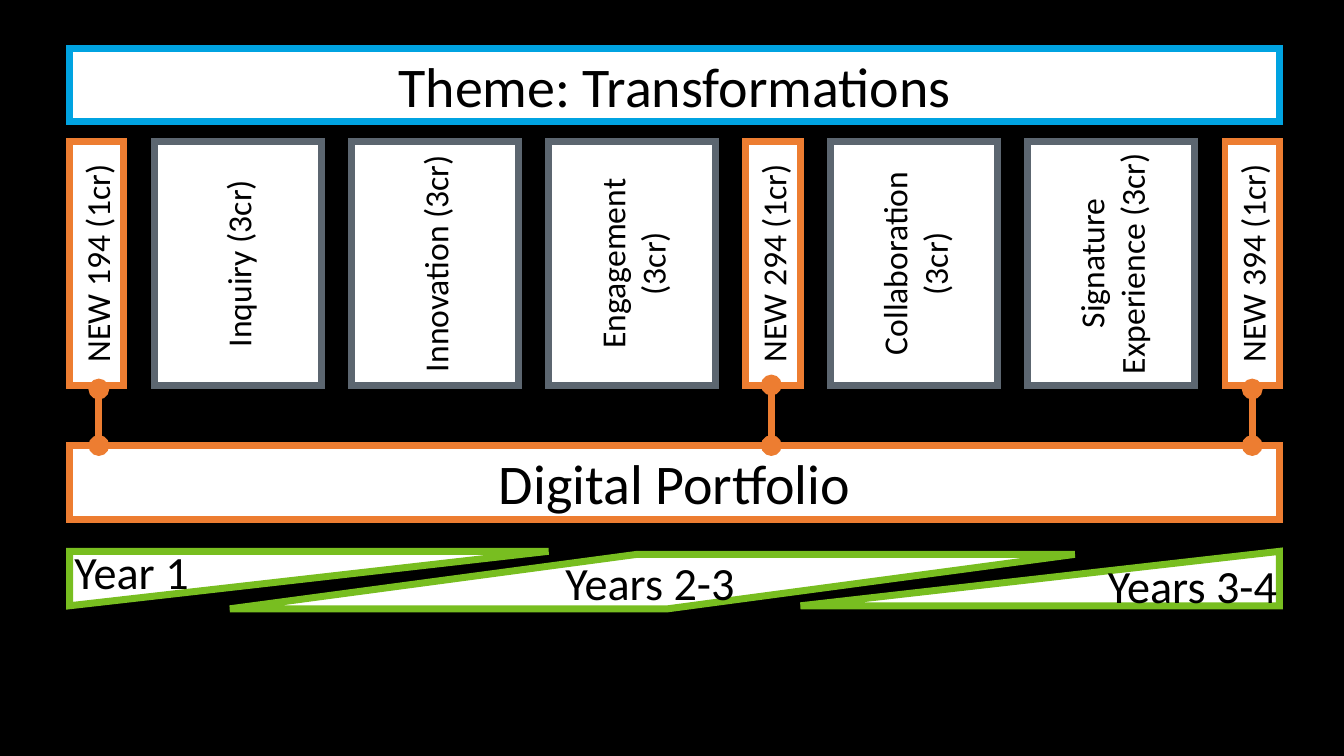
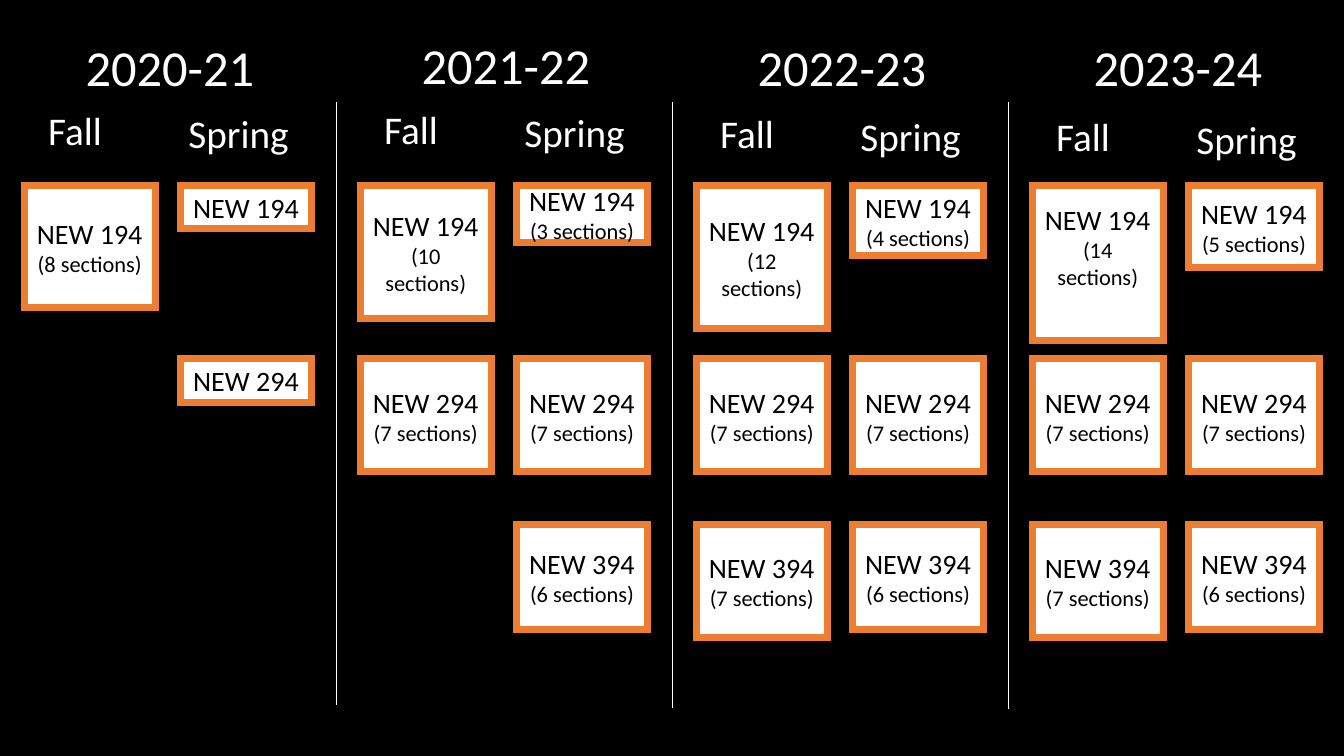
"""Builds two slides: a themed course pathway and its four-year schedule."""
from lxml import etree
from pptx import Presentation
from pptx.dml.color import RGBColor
from pptx.enum import shapes, text
from pptx.oxml.ns import qn
from pptx.util import Inches, Pt

BLACK, WHITE = "000000", "FFFFFF"
BLUE, ORANGE, GRAY, GREEN = "00A3E1", "ED7D31", "5C6670", "78BE20"
FONT = "Calibri"
WIDTH, HEIGHT = 13.33, 7.5
BORDER = 5

LEFT, SPAN = 0.69, 12
BANNERS = [("Theme: Transformations", 0.48, BLUE), ("Digital Portfolio", 4.42, ORANGE)]
COURSES = [
    ("NEW 194 (1cr)", 0.54, ORANGE),
    ("Inquiry (3cr)", 1.65, GRAY),
    ("Innovation (3cr)", 1.65, GRAY),
    ("Engagement (3cr)", 1.65, GRAY),
    ("NEW 294 (1cr)", 0.54, ORANGE),
    ("Collaboration (3cr)", 1.65, GRAY),
    ("Signature\vExperience (3cr)", 1.65, GRAY),
    ("NEW 394 (1cr)", 0.54, ORANGE),
]
PORTFOLIO_LINKS = [(0.98, 3.86), (7.65, 3.82), (12.42, 3.86)]
STAGES = [
    ("RIGHT_TRIANGLE", (LEFT, 5.47, 4.75, 0.54), "flipV", "Year 1", (0.64, 5.34, 1.35, 0.66)),
    ("RIGHT_TRIANGLE", (7.94, 5.47, 4.75, 0.54), "flipH", "Years 3-4", (10.89, 5.48, 1.9, 0.66)),
    ("PARALLELOGRAM", (2.28, 5.5, 8.38, 0.54), None, "Years 2-3", (5.51, 5.45, 1.9, 0.66)),
]
PARALLELOGRAM_SLANT = 7.474

YEARS = [
    {"name": "2020-21", "tops": (0.31, 1.01, 1.04), "divider_end": 6.99,
     "fall": [("194", 8, 1.21)],
     "spring": [("194", None, 0.43), ("294", None, 0.43)]},
    {"name": "2021-22", "tops": (0.29, 1, 1.03), "divider_end": 7.02,
     "fall": [("194", 10, 1.32), ("294", 7, 1.12)],
     "spring": [("194", 3, 0.57), ("294", 7, 1.12), ("394", 6, 1.05)]},
    {"name": "2022-23", "tops": (0.31, 1.04, 1.07), "divider_end": 7.03,
     "fall": [("194", 12, 1.42), ("294", 7, 1.12), ("394", 7, 1.12)],
     "spring": [("194", 4, 0.69), ("294", 7, 1.12), ("394", 6, 1.05)]},
    {"name": "2023-24", "tops": (0.31, 1.07, 1.09), "divider_end": None,
     "fall": [("194", 14, 1.54), ("294", 7, 1.12), ("394", 7, 1.12)],
     "spring": [("194", 5, 0.81), ("294", 7, 1.12), ("394", 6, 1.05)]},
]
COURSE_TOPS = {"194": 1.84, "294": 3.56, "394": 5.2}
TERM_LEFTS = {"fall": 0.24, "spring": 1.79}
SECTION_WIDTH = 1.3
RAISED_BOTTOM_INSET = 0.38


def color(value):
    return RGBColor.from_string(value)


def write(shape, lines, align="LEFT", anchor="TOP", ink=BLACK, vertical=None, wrap=True):
    frame = shape.text_frame
    frame.word_wrap = wrap
    frame.vertical_anchor = text.MSO_ANCHOR[anchor]
    if vertical:
        frame._txBody.bodyPr.set("vert", vertical)
    for index, (words, size) in enumerate(lines):
        paragraph = frame.add_paragraph() if index else frame.paragraphs[0]
        paragraph.text = words
        paragraph.alignment = text.PP_ALIGN[align]
        paragraph.font.name = FONT
        paragraph.font.size = Pt(size)
        paragraph.font.color.rgb = color(ink)


def add_label(slide, words, box, size, **style):
    write(slide.shapes.add_textbox(*map(Inches, box)), [(words, size)], **style)


def add_outlined(slide, kind, box, border):
    shape = slide.shapes.add_shape(shapes.MSO_SHAPE[kind], *map(Inches, box))
    shape.shadow.inherit = False
    shape.fill.solid()
    shape.fill.fore_color.rgb = color(WHITE)
    shape.line.color.rgb = color(border)
    shape.line.width = Pt(BORDER)
    etree.SubElement(shape.line._get_or_add_ln(), qn("a:miter")).set("lim", "800000")
    return shape


def add_box(slide, lines, box, border, vertical=None):
    shape = add_outlined(slide, "RECTANGLE", box, border)
    write(shape, lines, align="CENTER", anchor="MIDDLE", vertical=vertical)
    return shape


def add_vertical_line(slide, x, top, bottom, ink, width, ends=None):
    line = slide.shapes.add_connector(
        shapes.MSO_CONNECTOR.STRAIGHT, *map(Inches, (x, top, x, bottom)))
    line.line.color.rgb = color(ink)
    line.line.width = Pt(width)
    if ends:
        for tag in ("a:headEnd", "a:tailEnd"):
            etree.SubElement(line.line._get_or_add_ln(), qn(tag)).set("type", ends)
    etree.SubElement(line._element.spPr, qn("a:effectLst"))


def new_slide(presentation):
    slide = presentation.slides.add_slide(presentation.slide_layouts[6])
    slide.background.fill.solid()
    slide.background.fill.fore_color.rgb = color(BLACK)
    return slide


def build_pathway(slide):
    for words, top, border in BANNERS:
        add_box(slide, [(words, 40)], (LEFT, top, SPAN, 0.73), border)
    gap = (SPAN - sum(width for _, width, _ in COURSES)) / (len(COURSES) - 1)
    left = LEFT
    for words, width, border in COURSES:
        add_box(slide, [(words, 24)], (left, 1.4, width, 2.43), border, vertical="vert270")
        left += width + gap
    for x, top in PORTFOLIO_LINKS:
        add_vertical_line(slide, x, top, 4.42, ORANGE, BORDER, ends="oval")
    for kind, box, flip, words, label_box in STAGES:
        stage = add_outlined(slide, kind, box, GREEN)
        if flip:
            stage._element.spPr.xfrm.set(flip, "1")
        else:
            stage.adjustments[0] = PARALLELOGRAM_SLANT
        add_label(slide, words, label_box, 33, wrap=words != "Year 1")


def build_schedule(slide):
    pitch = WIDTH / len(YEARS)
    for index, year in enumerate(YEARS):
        left = index * pitch
        name_top, fall_top, spring_top = year["tops"]
        if year["divider_end"]:
            add_vertical_line(slide, left + pitch, 1.01, year["divider_end"], WHITE, 0.5)
        add_label(slide, year["name"], (left + 0.75, name_top, 1.89, 0.71), 36, ink=WHITE)
        add_label(slide, "Fall", (left + 0.38, fall_top, 0.99, 0.57), 28, ink=WHITE)
        add_label(slide, "Spring", (left + 1.67, spring_top, 1.29, 0.57), 28,
                  ink=WHITE, align="RIGHT")
        for term, term_left in TERM_LEFTS.items():
            for course, sections, height in year[term]:
                lines = [(f"NEW {course}", 20)]
                if sections:
                    lines.append((f"({sections} sections)", 16))
                box = (left + term_left, COURSE_TOPS[course], SECTION_WIDTH, height)
                shape = add_box(slide, lines, box, ORANGE)
                if sections == 14:
                    shape.text_frame.margin_bottom = Inches(RAISED_BOTTOM_INSET)


def main():
    presentation = Presentation()
    presentation.slide_width, presentation.slide_height = Inches(WIDTH), Inches(HEIGHT)
    build_pathway(new_slide(presentation))
    build_schedule(new_slide(presentation))
    presentation.save("out.pptx")


if __name__ == "__main__":
    main()
